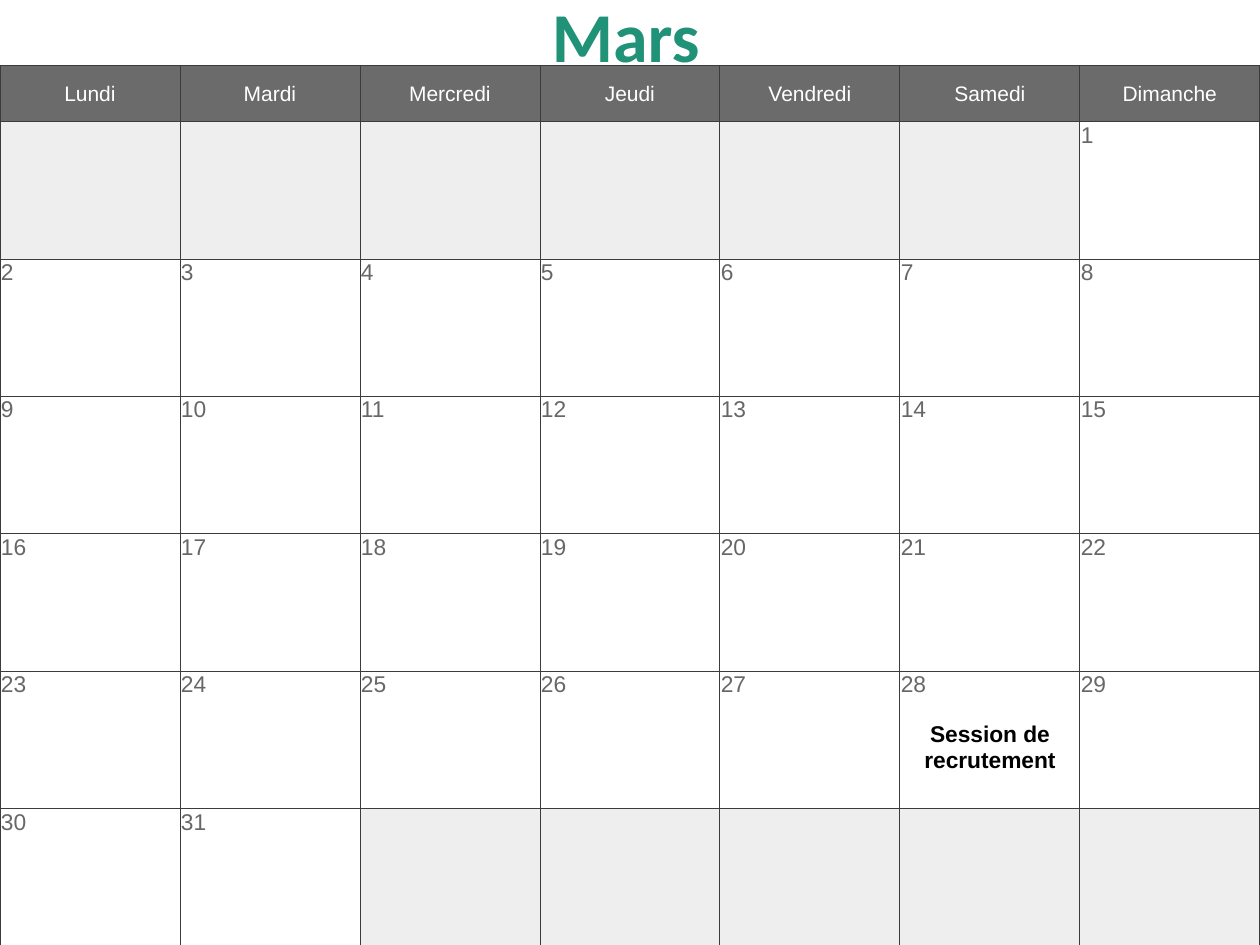
"""Build a one-slide monthly calendar for March."""
import lxml.etree
import pptx
import pptx.dml.color
import pptx.enum.text
import pptx.oxml.ns
import pptx.util

Cm, Pt = pptx.util.Cm, pptx.util.Pt
RGBColor = pptx.dml.color.RGBColor
PP_ALIGN = pptx.enum.text.PP_ALIGN
MSO_ANCHOR = pptx.enum.text.MSO_ANCHOR
qn = pptx.oxml.ns.qn

WHITE = RGBColor(0xFF, 0xFF, 0xFF)
BLACK = RGBColor(0x00, 0x00, 0x00)
HEADER_GREY = RGBColor(0x6B, 0x6B, 0x6B)
EMPTY_GREY = RGBColor(0xEE, 0xEE, 0xEE)
DAY_GREY = RGBColor(0x67, 0x67, 0x67)
BORDER_GREY = RGBColor(0x3B, 0x3B, 0x3B)
TITLE_GREEN = RGBColor(0x20, 0x92, 0x77)
TITLE_OUTLINE = RGBColor(0x41, 0x19, 0x3E)

SLIDE_WIDTH, SLIDE_HEIGHT = Cm(25.4), Cm(19.05)
WEEKDAYS = ["Lundi", "Mardi", "Mercredi", "Jeudi", "Vendredi", "Samedi", "Dimanche"]
WEEKS = 6
FIRST_COLUMN = 6
LAST_DAY = 31
EVENTS = {28: "Session de recrutement"}


class CalendarSlide:
    def __init__(self, slide):
        self.slide = slide
        self.body_font = "Arial"
        self.title_font = "Calibri"

    def style(self, paragraph, font, size, color, bold=False, align=None):
        paragraph.alignment = align
        for run in paragraph.runs:
            run.font.name = font
            run.font.size = Pt(size)
            run.font.bold = bold
            run.font.color.rgb = color

    def line(self, tag, color, width):
        line = lxml.etree.Element(qn(tag), w=str(Pt(width)))
        fill = lxml.etree.SubElement(line, qn("a:solidFill"))
        lxml.etree.SubElement(fill, qn("a:srgbClr"), val=str(color))
        return line

    def title(self, text, left, top, width, height):
        frame = self.slide.shapes.add_textbox(left, top, width, height).text_frame
        frame.word_wrap = False
        frame.auto_size = pptx.enum.text.MSO_AUTO_SIZE.SHAPE_TO_FIT_TEXT
        frame.text = text
        month = frame.paragraphs[0]
        self.style(month, self.title_font, 40, TITLE_GREEN, True, PP_ALIGN.CENTER)
        month.runs[0].font._element.insert(0, self.line("a:ln", TITLE_OUTLINE, 1))

    def cell(self, cell, fill):
        cell.margin_left = cell.margin_right = cell.margin_top = Cm(0.02)
        cell.margin_bottom = 0
        cell.fill.solid()
        cell.fill.fore_color.rgb = fill
        properties = cell._tc.get_or_add_tcPr()
        for index, side in enumerate("LRTB"):
            properties.insert(index, self.line(f"a:ln{side}", BORDER_GREY, 0.5))

    def weekday(self, cell, name):
        self.cell(cell, HEADER_GREY)
        cell.vertical_anchor = MSO_ANCHOR.MIDDLE
        cell.text_frame.text = name
        self.style(cell.text_frame.paragraphs[0], self.body_font, 12, WHITE,
                   align=PP_ALIGN.CENTER)

    def day(self, cell, number):
        if not 1 <= number <= LAST_DAY:
            self.cell(cell, EMPTY_GREY)
            return
        self.cell(cell, WHITE)
        cell.text_frame.text = str(number)
        self.style(cell.text_frame.paragraphs[0], self.body_font, 13, DAY_GREY)
        if number in EVENTS:
            event = cell.text_frame.add_paragraph()
            event.text = EVENTS[number]
            event.space_before = Pt(14)
            self.style(event, self.body_font, 13, BLACK, True, PP_ALIGN.CENTER)

    def calendar(self, top, header_height, week_height):
        columns = len(WEEKDAYS)
        month = self.slide.shapes.add_table(
            WEEKS + 1, columns, 0, top, SLIDE_WIDTH,
            header_height + WEEKS * week_height).table
        month.first_row = month.horz_banding = False
        for column in month.columns:
            column.width = SLIDE_WIDTH // columns
        for row in month.rows:
            row.height = week_height
        month.rows[0].height = header_height
        for column, name in enumerate(WEEKDAYS):
            self.weekday(month.cell(0, column), name)
            for week in range(WEEKS):
                number = week * columns + column - FIRST_COLUMN + 1
                self.day(month.cell(week + 1, column), number)


def main():
    presentation = pptx.Presentation()
    presentation.slide_width = SLIDE_WIDTH
    presentation.slide_height = SLIDE_HEIGHT
    march = CalendarSlide(presentation.slides.add_slide(presentation.slide_layouts[6]))
    march.calendar(Cm(1.32), Cm(1.13), Cm(2.77))
    march.title("Mars", Cm(10.85), Cm(-0.28), Cm(3.53), Cm(1.96))
    presentation.save("out.pptx")


if __name__ == "__main__":
    main()
